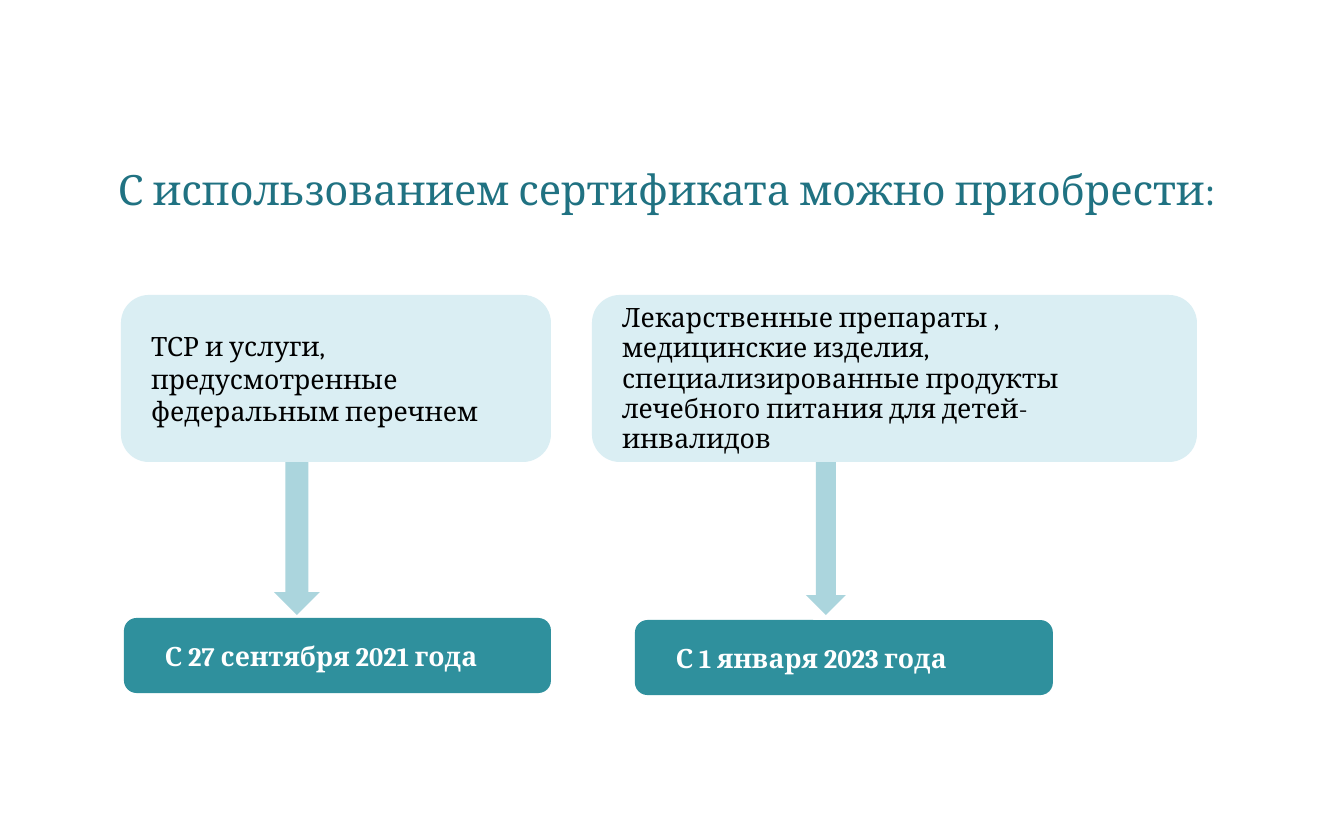
"""Build the slide on what a certificate can buy and from which date."""
from dataclasses import dataclass

from pptx import Presentation
from pptx.dml.color import RGBColor
from pptx.enum.shapes import MSO_SHAPE
from pptx.enum.text import MSO_ANCHOR, PP_ALIGN
from pptx.util import Pt

ROUNDED = MSO_SHAPE.ROUNDED_RECTANGLE
DOWN_ARROW = MSO_SHAPE.DOWN_ARROW
MIDDLE = MSO_ANCHOR.MIDDLE
LEFT = PP_ALIGN.LEFT

TITLE = "С использованием сертификата можно приобрести:"
TITLE_BOX = (104, 87, 1210, 140)
COLUMNS = [
    {
        "items": ["ТСР и услуги, предусмотренные федеральным перечнем"],
        "date": "С 27 сентября 2021 года",
        "leading": 17,
        "card": (121, 430),
        "arrow": (274, 459, 46, 156),
        "badge": (124, 618, 427),
    },
    {
        "items": [
            "Лекарственные препараты ,",
            "медицинские изделия,",
            "специализированные продукты\vлечебного питания для детей-инвалидов",
        ],
        "date": "С 1 января 2023 года",
        "leading": 16,
        "card": (592, 605),
        "arrow": (806, 462, 40, 153),
        "badge": (635, 620, 418),
    },
]

PX = 6694
SLIDE_W, SLIDE_H = 1344, 833
CARD_TOP, CARD_H, BADGE_H = 295, 167, 75
PAD_X, PAD_Y = 14, 7
CARD_PAD, BADGE_PAD, TITLE_TOP_PAD = 22, 37, 64


@dataclass(frozen=True)
class Theme:
    """Colours, font and type sizes."""
    font: str = "Cambria"
    title: str = "207282"
    card: str = "DAEEF3"
    arrow: str = "ABD5DD"
    badge: str = "2F909D"
    dark: str = "000000"
    light: str = "FFFFFF"
    title_size: int = 22
    title_leading: int = 30
    body_size: int = 14


THEME = Theme()


def emu(box):
    """Turn px lengths into EMU."""
    return [v * PX for v in box]


def write(sp, lines, size, color, left, top=PAD_Y, bold=False, leading=None):
    """Put left-aligned paragraphs into a shape."""
    tf = sp.text_frame
    tf.word_wrap = True
    tf.vertical_anchor = MIDDLE
    tf.margin_left, tf.margin_top, tf.margin_right, tf.margin_bottom = emu(
        (left, top, PAD_X, PAD_Y))
    tf.text = "\n".join(lines)
    for p in tf.paragraphs:
        p.alignment = LEFT
        p.font.name = THEME.font
        p.font.size = Pt(size)
        p.font.bold = bold
        p.font.color.rgb = RGBColor.from_string(color)
        if leading:
            p.line_spacing = Pt(leading)


def add_filled(s, kind, box, color):
    """Add a flat shape without outline."""
    sp = s.shapes.add_shape(kind, *emu(box))
    sp.shadow.inherit = False
    sp.fill.solid()
    sp.fill.fore_color.rgb = RGBColor.from_string(color)
    sp.line.fill.background()
    return sp


def add_column(s, column):
    """Add a date badge, an arrow and the card above it."""
    badge = add_filled(s, ROUNDED, (*column["badge"], BADGE_H), THEME.badge)
    write(badge, [column["date"]], THEME.body_size, THEME.light, BADGE_PAD, bold=True)
    add_filled(s, DOWN_ARROW, column["arrow"], THEME.arrow)
    x, w = column["card"]
    card = add_filled(s, ROUNDED, (x, CARD_TOP, w, CARD_H), THEME.card)
    write(card, column["items"], THEME.body_size, THEME.dark, CARD_PAD,
          leading=column["leading"])


def main():
    """Build and save the slide."""
    prs = Presentation()
    prs.slide_width, prs.slide_height = emu((SLIDE_W, SLIDE_H))
    s = prs.slides.add_slide(prs.slide_layouts[6])
    title = s.shapes.add_textbox(*emu(TITLE_BOX))
    write(title, [TITLE], THEME.title_size, THEME.title, PAD_X,
          top=TITLE_TOP_PAD, leading=THEME.title_leading)
    for column in COLUMNS:
        add_column(s, column)
    prs.save("out.pptx")


if __name__ == "__main__":
    main()
